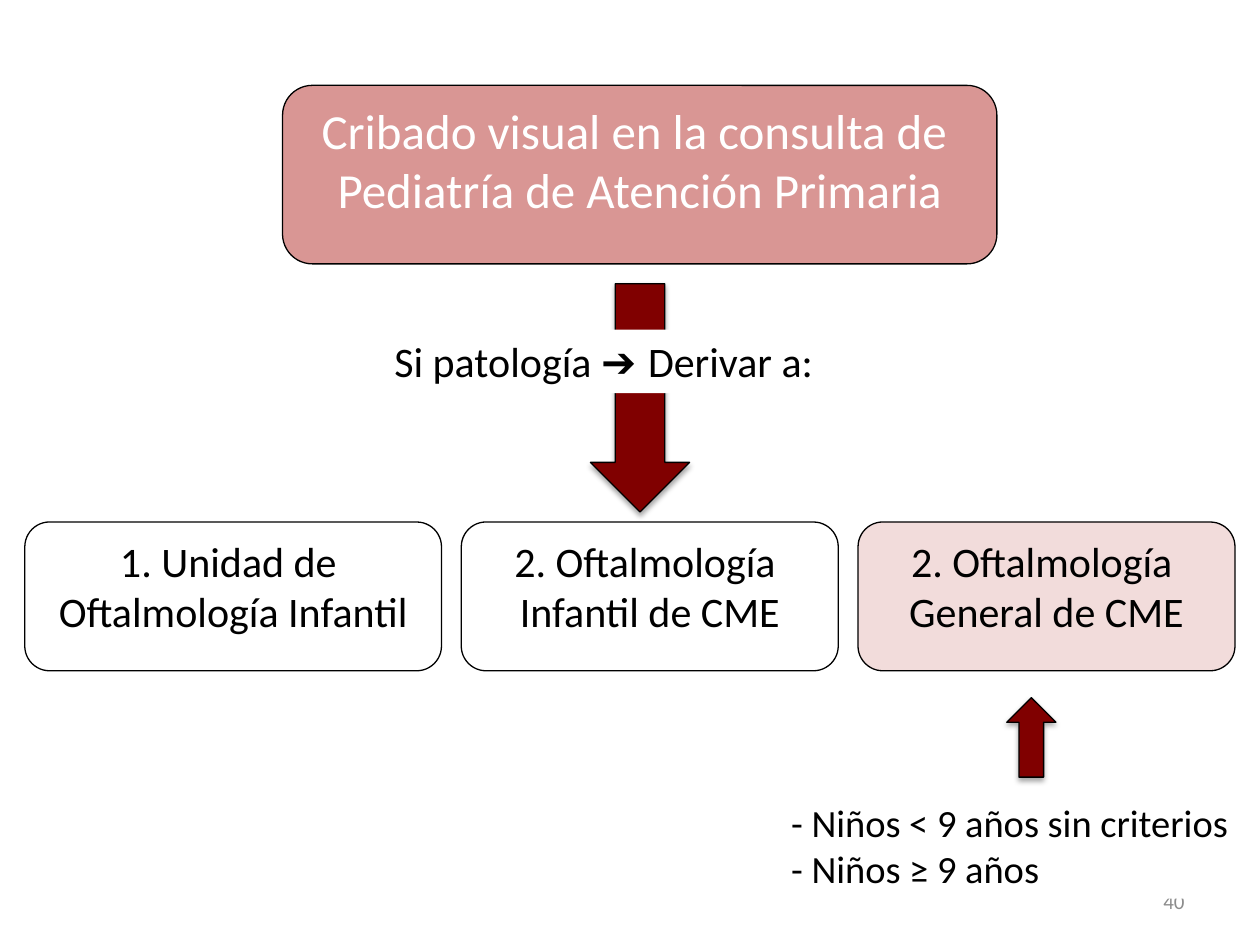
from lxml.etree import SubElement
from pptx import Presentation
from pptx.dml.color import RGBColor
from pptx.enum.shapes import MSO_SHAPE as Shape
from pptx.enum.text import MSO_ANCHOR as Anchor, MSO_AUTO_SIZE as AutoSize, PP_ALIGN as Align
from pptx.oxml.ns import qn
from pptx.util import Pt

COLORS = {
    "black": "000000",
    "white": "FFFFFF",
    "arrow": "800000",
    "screening": "D99694",
    "general": "F2DCDB",
    "number": "8C8C8C",
}


def color(name):
    return RGBColor.from_string(COLORS[name])


def add_shape(slide, kind, box, fill=None, line=None):
    shape = slide.shapes.add_shape(kind, *map(Pt, box))
    shape.shadow.inherit = False
    if fill:
        shape.fill.solid()
        shape.fill.fore_color.rgb = color(fill)
    else:
        shape.fill.background()
    if line:
        shape.line.color.rgb = color(line)
        shape.line.width = Pt(0.75)
    else:
        shape.line.fill.background()
    return shape


def write_lines(shape, lines, size, font_color="black", align=Align.LEFT,
                anchor=Anchor.TOP, wrap=True):
    """Each line is a list of (text, font name) runs."""
    frame = shape.text_frame
    frame.word_wrap = wrap
    frame.vertical_anchor = anchor
    for index, runs in enumerate(lines):
        paragraph = frame.add_paragraph() if index else frame.paragraphs[0]
        paragraph.alignment = align
        paragraph.font.size = Pt(size)
        paragraph.font.color.rgb = color(font_color)
        for text, font_name in runs:
            run = paragraph.add_run()
            run.text = text
            run.font.name = font_name


def calibri(*lines):
    return [[(line, "Calibri")] for line in lines]


def add_step(slide, box, lines, size, fill=None, font_color="black"):
    shape = add_shape(slide, Shape.ROUNDED_RECTANGLE, box, fill, "black")
    write_lines(shape, calibri(*lines), size, font_color, Align.CENTER, wrap=False)


def add_arrow(slide, kind, box):
    shape = add_shape(slide, kind, box, "arrow", "black")
    # Soft shadow falling straight down
    effects = shape._element.spPr.find(qn("a:effectLst"))
    shadow = SubElement(effects, qn("a:outerShdw"), blurRad=str(Pt(3.1)),
                        dist=str(Pt(1.8)), dir="5400000", rotWithShape="0")
    tint = SubElement(shadow, qn("a:srgbClr"), val=COLORS["black"])
    SubElement(tint, qn("a:alpha"), val="35000")


def add_note(slide, box, lines, size):
    shape = add_shape(slide, Shape.RECTANGLE, box, "white")
    write_lines(shape, lines, size)
    shape.text_frame.auto_size = AutoSize.SHAPE_TO_FIT_TEXT


def add_slide_number(slide, number):
    text_box = slide.shapes.add_textbox(Pt(516), Pt(500.5), Pt(168), Pt(28.75))
    write_lines(text_box, calibri(number), 12, "number", Align.RIGHT, Anchor.MIDDLE)


def main():
    presentation = Presentation()
    presentation.slide_width, presentation.slide_height = Pt(720), Pt(540)
    slide = presentation.slides.add_slide(presentation.slide_layouts[6])

    # Arrow from the screening to the referrals, under its label
    add_arrow(slide, Shape.DOWN_ARROW, (337.4, 162.2, 56.7, 130.4))
    add_slide_number(slide, "40")

    # Screening
    add_step(slide, (161.5, 48.8, 408.2, 102),
             ["Cribado visual en la consulta de ", "Pediatría de Atención Primaria"],
             28, "screening", "white")

    # Referral destinations, left to right with equal gaps
    destinations = [
        (238.1, ["1. Unidad de ", "Oftalmología Infantil"], None),
        (215.4, ["2. Oftalmología ", "Infantil de CME"], None),
        (215.4, ["2. Oftalmología ", "General de CME"], "general"),
    ]
    left, gap = 14.2, 11.3
    for width, lines, fill in destinations:
        add_step(slide, (left, 298.3, width, 85), lines, 24, fill)
        left += width + gap

    # Referral condition
    add_note(slide, (218.2, 188.4, 289.4, 36.3),
             [[("Si patología ", "Calibri"), ("➔ ", "Arial"), ("Derivar a:", "Calibri")]], 24)

    # Criteria for general ophthalmology
    add_note(slide, (445, 453, 266.4, 60.5),
             calibri("- Niños < 9 años sin criterios", "- Niños ≥ 9 años"), 22)
    add_arrow(slide, Shape.UP_ARROW, (575.3, 398.7, 28.1, 45.4))

    presentation.save("out.pptx")


if __name__ == "__main__":
    main()
